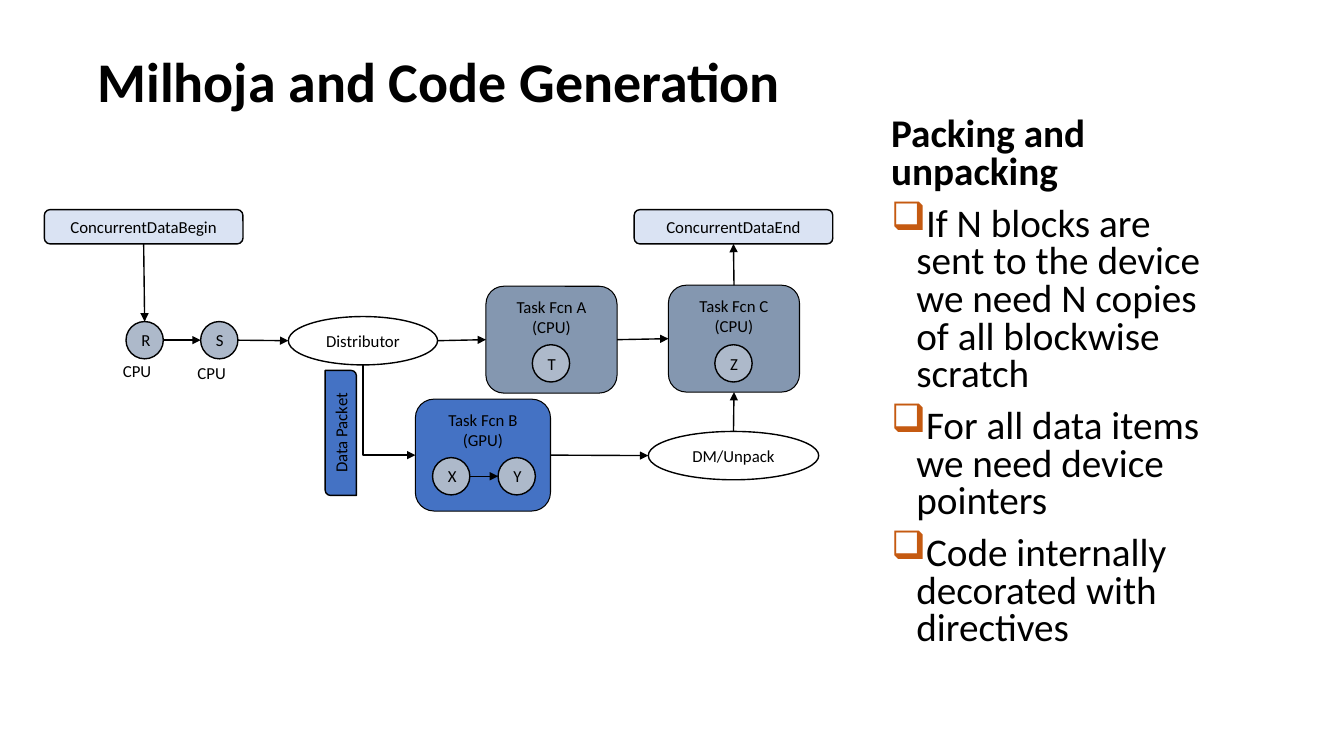
from lxml import etree
from pptx import Presentation
from pptx.dml.color import RGBColor
from pptx.enum.shapes import MSO_AUTO_SHAPE_TYPE as SHAPE, MSO_CONNECTOR as CONN
from pptx.enum.text import MSO_ANCHOR as ANCHOR, PP_ALIGN as ALIGN
from pptx.oxml.ns import qn
from pptx.util import Inches, Pt

TOP, LEFT, BOTTOM, RIGHT = range(4)
BLACK, NODE, CPU_TASK, GPU, CALL = "000000", "ADB9CA", "8497B0", "4472C4", "DAE3F3"
BULLET = "C55A11"


def rgb(color):
    return RGBColor.from_string(color)


def add_run(p, text, size, bold=False):
    r = p.add_run()
    r.text = text
    r.font.name, r.font.size, r.font.bold = "Calibri", Pt(size), bold
    r.font.color.rgb = rgb(BLACK)


def add_text_box(slide, x, y, w, h, wrap=True):
    tf = slide.shapes.add_textbox(Inches(x), Inches(y), Inches(w), Inches(h)).text_frame
    tf.word_wrap = wrap
    return tf


def add_block(slide, kind, text, x, y, w, h, fill=None, line=1, anchor=ANCHOR.MIDDLE):
    s = slide.shapes.add_shape(kind, Inches(x), Inches(y), Inches(w), Inches(h))
    s.shadow.inherit = False
    if fill:
        s.fill.solid()
        s.fill.fore_color.rgb = rgb(fill)
    else:
        s.fill.background()
    s.line.color.rgb, s.line.width = rgb(BLACK), Pt(line)
    s.text_frame.vertical_anchor = anchor
    p = s.text_frame.paragraphs[0]
    p.alignment = ALIGN.CENTER
    add_run(p, text, 12)
    return s


def side_point(s, side):
    """Middle of one side of a shape."""
    cx, cy = s.left + s.width // 2, s.top + s.height // 2
    return [(cx, s.top), (s.left, cy), (cx, s.top + s.height), (s.left + s.width, cy)][side]


def style_arrow(c):
    c.line.color.rgb, c.line.width = rgb(BLACK), Pt(1)
    ln = c.line._get_or_add_ln()
    etree.SubElement(ln, qn("a:tailEnd"), type="triangle")
    etree.SubElement(c._element.spPr, qn("a:effectLst"))


def add_arrow(slide, start, start_side, end, end_side):
    c = slide.shapes.add_connector(
        CONN.STRAIGHT, *side_point(start, start_side), *side_point(end, end_side))
    # Only rectangles have their connection sites numbered by side
    if start.auto_shape_type == SHAPE.ROUNDED_RECTANGLE:
        c.begin_connect(start, start_side)
    if end.auto_shape_type == SHAPE.ROUNDED_RECTANGLE:
        c.end_connect(end, end_side)
    style_arrow(c)


def add_elbow(slide, start, end):
    """Arrow that runs down from start, then right into end."""
    (x1, y1), (x2, y2) = side_point(start, BOTTOM), side_point(end, LEFT)
    cx, cy = (x1 + x2) // 2, (y1 + y2) // 2
    half_w, half_h = (y2 - y1) // 2, (x2 - x1) // 2
    c = slide.shapes.add_connector(
        CONN.ELBOW, cx + half_w, cy - half_h, cx - half_w, cy + half_h)
    c._element.spPr.find(qn("a:prstGeom")).set("prst", "bentConnector2")
    c._element.spPr.find(qn("a:xfrm")).set("rot", str(270 * 60000))
    style_arrow(c)


def add_title(slide, x, y, w, h):
    tf = add_text_box(slide, x, y, w, h)
    tf.vertical_anchor = ANCHOR.MIDDLE
    p = tf.paragraphs[0]
    p.line_spacing = 0.9
    add_run(p, "Milhoja and Code Generation", 40, True)


def add_task_graph(slide, x, y):
    def call(text, dx):
        return add_block(slide, SHAPE.ROUNDED_RECTANGLE, text, x + dx, y, 1.97, 0.34, CALL)

    def task(text, dx, dy, w, h, fill):
        return add_block(slide, SHAPE.ROUNDED_RECTANGLE, text, x + dx, y + dy, w, h,
                         fill, 0.75, ANCHOR.TOP)

    def oval(text, dx, dy, w):
        return add_block(slide, SHAPE.OVAL, text, x + dx, y + dy, w, 0.48)

    # Function calls, tasks and stages
    begin, end = call("ConcurrentDataBegin", 0), call("ConcurrentDataEnd", 5.85)
    task_b = task("Task Fcn B (GPU)", 3.68, 1.88, 1.34, 1.11, GPU)
    task_a = task("Task Fcn A (CPU)", 4.38, 0.76, 1.3, 1.06, CPU_TASK)
    task_c = task("Task Fcn C (CPU)", 6.19, 0.75, 1.3, 1.06, CPU_TASK)
    distributor = oval("Distributor", 2.42, 1.06, 1.48)
    unpack = oval("DM/Unpack", 5.99, 2.2, 1.69)
    packet = add_block(slide, SHAPE.ROUND_2_DIAG_RECTANGLE, "Data Packet",
                       x + 2.32, y + 2.06, 1.24, 0.31, GPU)
    packet.rotation = 270

    # Round nodes
    spots = {"R": (0.81, 1.11), "S": (1.55, 1.11), "T": (4.84, 1.34),
             "X": (3.85, 2.46), "Y": (4.5, 2.46), "Z": (6.65, 1.34)}
    node = {name: add_block(slide, SHAPE.OVAL, name, x + dx, y + dy, 0.37, 0.37, NODE)
            for name, (dx, dy) in spots.items()}
    for dx, dy in [(0.68, 1.45), (1.42, 1.47)]:
        tf = add_text_box(slide, x + dx, y + dy, 0.49, 0.3, wrap=False)
        add_run(tf.paragraphs[0], "CPU", 12)

    # Arrows
    for start, finish in [(node["R"], node["S"]), (node["S"], distributor),
                          (distributor, task_a), (task_a, task_c),
                          (node["X"], node["Y"]), (task_b, unpack)]:
        add_arrow(slide, start, RIGHT, finish, LEFT)
    add_arrow(slide, begin, BOTTOM, node["R"], TOP)
    for start, finish in [(unpack, task_c), (task_c, end)]:
        add_arrow(slide, start, TOP, finish, BOTTOM)
    add_elbow(slide, distributor, task_b)


def add_bullet(p):
    pPr = p._p.get_or_add_pPr()
    pPr.set("marL", str(Inches(0.25)))
    pPr.set("indent", str(Inches(-0.25)))
    color = etree.SubElement(pPr, qn("a:buClr"))
    etree.SubElement(color, qn("a:srgbClr"), val=BULLET)
    etree.SubElement(pPr, qn("a:buChar"), char="❑")


def add_packing_notes(slide, x, y, w, h):
    tf = add_text_box(slide, x, y, w, h)
    p = tf.paragraphs[0]
    p.line_spacing = 0.8
    add_run(p, "Packing and unpacking", 28, True)
    for text in ["If N blocks are sent to the device we need N copies of all blockwise scratch",
                 "For all data items we need device pointers",
                 "Code internally decorated with directives"]:
        p = tf.add_paragraph()
        p.line_spacing, p.space_before = 0.8, Pt(10)
        add_bullet(p)
        add_run(p, text, 28)


def main():
    prs = Presentation()
    prs.slide_width, prs.slide_height = Inches(13.33), Inches(7.5)
    slide = prs.slides.add_slide(prs.slide_layouts[6])
    add_title(slide, 0.87, 0.11, 11.5, 1.45)
    add_task_graph(slide, 0.44, 2.08)
    add_packing_notes(slide, 8.74, 1.12, 3.48, 5.92)
    prs.save("out.pptx")


if __name__ == "__main__":
    main()
